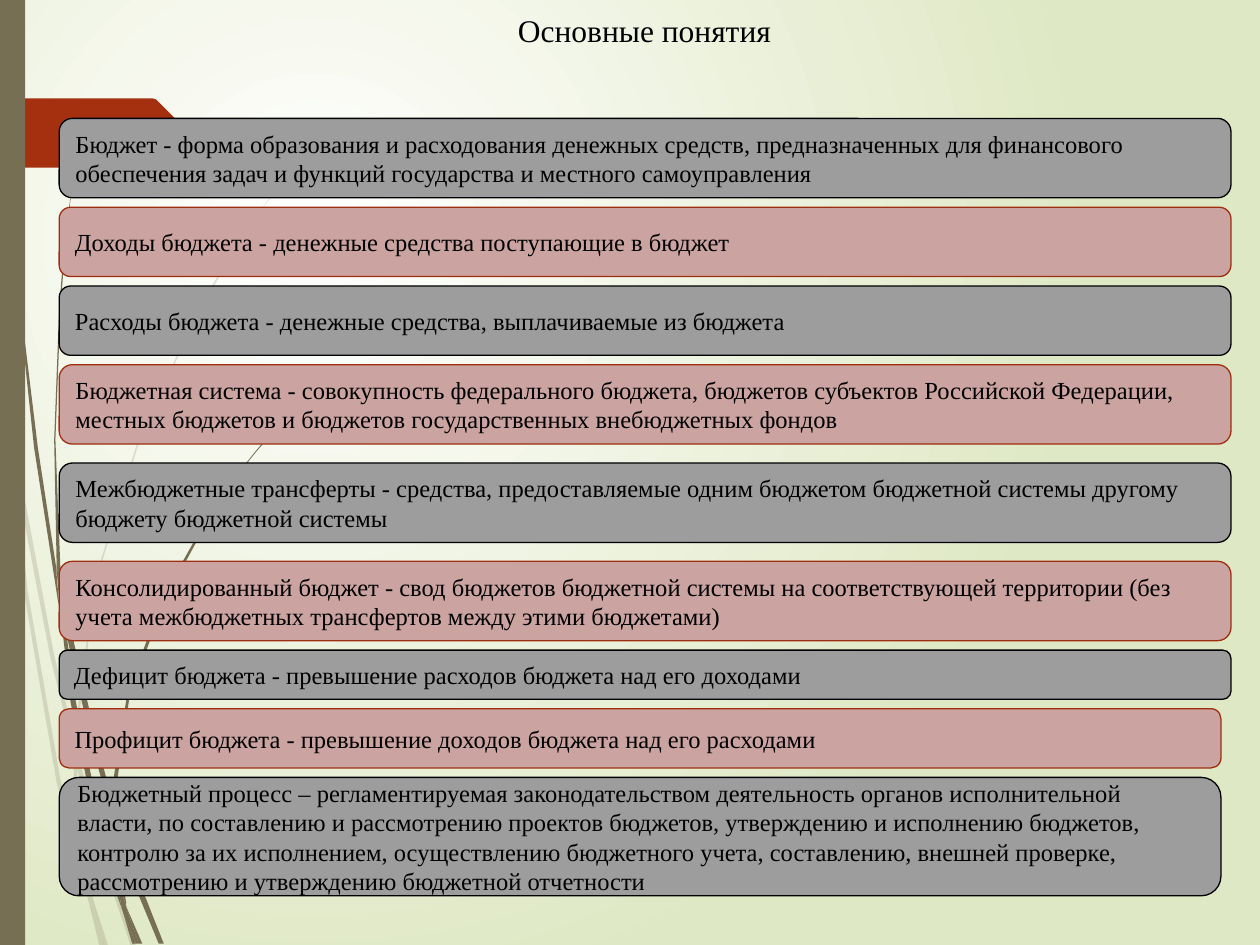
"""Build the slide of basic budget terms on a grid of 1000 columns by 750 rows."""
from dataclasses import dataclass

from lxml.etree import SubElement
from pptx import Presentation
from pptx.dml.color import RGBColor as RGB
from pptx.enum.shapes import MSO_SHAPE as SHAPE
from pptx.enum.text import MSO_ANCHOR as ANCHOR, PP_ALIGN as ALIGN
from pptx.oxml.ns import qn
from pptx.util import Inches, Pt


@dataclass(frozen=True)
class Theme:
    font: str = "Times New Roman"
    title_size: int = 18
    body_size: int = 14
    line_width: float = 0.75
    text: str = "000000"
    olive: str = "766F54"
    red: str = "A53010"
    glow: str = "FFFFFF"
    edge: str = "DFE8C4"
    bars: tuple = (("9D9D9D", "000000"), ("CBA3A0", "9E2E0F"))


theme = Theme()
CELL = Inches(0.01)
GAP = 7.5
FAINT = 20000

faint_wisps = [
    [(8, 350), (6, 322), (0, 282), (0, 299), (7, 344)],
    [(40, 522), (59, 599), (59, 586), (43, 520), (10, 345), (12, 376)],
    [(64, 607), (61, 596), (61, 610), (85, 694), (104, 751), (108, 751), (88, 692)],
    [(83, 751), (86, 751), (73, 711)],
    [(64, 683), (48, 619), (22, 469), (12, 376), (8, 350), (19, 470), (45, 621),
     (64, 693), (70, 714), (69, 707)],
    [(58, 599), (60, 646), (64, 683), (67, 692), (73, 711), (72, 706), (63, 646),
     (61, 610), (61, 608)],
    [(61, 584), (76, 462), (111, 349), (159, 245), (187, 198), (201, 175), (217, 154),
     (217, 153), (201, 175), (186, 197), (158, 244), (110, 348), (75, 461), (59, 584),
     (59, 586), (61, 596)],
    [(70, 714), (79, 751), (82, 751)],
    [(61, 608), (61, 610), (61, 596), (59, 586), (58, 599)],
    [(67, 692), (65, 683), (69, 707), (70, 714), (82, 751), (83, 751), (73, 711)],
]
solid_wisps = [
    [(5, 110), (14, 233), (27, 355), (46, 477), (47, 481), (45, 457), (45, 453),
     (30, 355), (15, 232), (6, 109), (4, 48), (3, 0), (2, 0), (3, 48)],
    [(73, 592), (88, 645), (88, 633), (88, 631), (77, 590), (50, 472), (53, 505)],
    [(94, 649), (91, 641), (91, 656), (109, 708), (126, 749), (130, 749), (113, 706)],
    [(91, 691), (81, 657), (60, 556), (53, 505), (47, 477), (56, 557), (77, 659),
     (92, 708), (97, 722), (96, 717)],
    [(50, 472), (48, 453), (44, 349), (48, 245), (52, 193), (58, 141), (51, 193),
     (47, 245), (43, 349), (45, 449), (49, 472)],
    [(110, 749), (113, 749), (100, 719)],
    [(47, 477), (53, 505), (50, 472), (49, 472), (45, 449), (45, 453)],
    [(91, 633), (103, 552), (131, 476), (169, 406), (191, 374), (203, 359), (216, 344),
     (215, 344), (203, 358), (191, 373), (168, 405), (129, 474), (101, 551), (88, 631),
     (91, 641)],
    [(97, 722), (105, 749), (108, 749)],
    [(88, 645), (91, 691), (96, 706), (100, 719), (100, 716), (91, 656), (90, 651)],
    [(96, 706), (91, 691), (96, 717), (97, 722), (108, 749), (110, 749), (100, 719)],
]
banner = [(149, 107), (124, 132), (121, 133), (0, 133), (0, 78), (121, 78), (124, 79),
          (149, 104)]

terms = [
    ("Бюджет - форма образования и расходования денежных средств, предназначенных для "
     "финансового обеспечения задач и функций государства и местного самоуправления",
     63, 930, GAP),
    ("Доходы бюджета - денежные средства поступающие в бюджет", 55, 930, GAP),
    ("Расходы бюджета - денежные средства, выплачиваемые из бюджета", 55, 930, GAP),
    ("Бюджетная система - совокупность федерального бюджета, бюджетов субъектов "
     "Российской Федерации, местных бюджетов и бюджетов государственных внебюджетных "
     "фондов", 63, 930, 2 * GAP),
    ("Межбюджетные трансферты - средства, предоставляемые одним бюджетом бюджетной "
     "системы другому бюджету бюджетной системы", 63, 930, 2 * GAP),
    ("Консолидированный бюджет - свод бюджетов бюджетной системы на соответствующей "
     "территории (без учета межбюджетных трансфертов между этими бюджетами)",
     63, 930, GAP),
    ("Дефицит бюджета - превышение расходов бюджета над его доходами", 39, 930, GAP),
    ("Профицит бюджета - превышение доходов бюджета над его расходами", 47, 922, GAP),
    ("Бюджетный процесс – регламентируемая законодательством деятельность органов "
     "исполнительной власти, по составлению и рассмотрению проектов бюджетов, "
     "утверждению и исполнению бюджетов, контролю за их исполнением, осуществлению "
     "бюджетного учета, составлению, внешней проверке, рассмотрению и утверждению "
     "бюджетной отчетности", 94, 922, GAP),
]


def paint(sp, color, line=None):
    sp.shadow.inherit = False
    sp.fill.solid()
    sp.fill.fore_color.rgb = RGB.from_string(color)
    if line:
        sp.line.color.rgb = RGB.from_string(line)
        sp.line.width = Pt(theme.line_width)
    else:
        sp.line.fill.background()


def write(sp, text, size, align, anchor):
    tf = sp.text_frame
    tf.word_wrap = True
    tf.vertical_anchor = anchor
    tf.text = text
    p = tf.paragraphs[0]
    p.alignment = align
    r = p.runs[0]
    r.font.name = theme.font
    r.font.size = Pt(size)
    r.font.color.rgb = RGB.from_string(theme.text)


prs = Presentation()
prs.slide_width, prs.slide_height = 1000 * CELL, 750 * CELL
s = prs.slides.add_slide(prs.slide_layouts[6])

fill = s.background.fill
fill.gradient()
for stop, color, position in zip(fill.gradient_stops, (theme.glow, theme.edge), (0, 1)):
    stop.color.rgb = RGB.from_string(color)
    stop.position = position
grad = s._element.find(".//" + qn("a:gradFill"))
grad.remove(grad.find(qn("a:lin")))
radial = SubElement(grad, qn("a:path"), {"path": "circle"})
SubElement(radial, qn("a:fillToRect"), l="50000", t="50000", r="100000", b="100000")

outlines = [(w, theme.olive, FAINT) for w in faint_wisps]
outlines += [(w, theme.olive, None) for w in solid_wisps]
outlines.append((banner, theme.red, None))
for points, color, alpha in outlines:
    builder = s.shapes.build_freeform(*points[0], scale=CELL)
    builder.add_line_segments(points[1:], close=True)
    sp = builder.convert_to_shape()
    paint(sp, color)
    if alpha:
        rgb = sp._element.spPr.find(qn("a:solidFill"))[0]
        SubElement(rgb, qn("a:alpha"), val=str(alpha))

strip = s.shapes.add_shape(SHAPE.RECTANGLE, 0, 0, 20 * CELL, prs.slide_height)
paint(strip, theme.olive)

title = s.shapes.add_textbox(49 * CELL, 4 * CELL, 925 * CELL, 81 * CELL)
write(title, "Основные понятия", theme.title_size, ALIGN.CENTER, ANCHOR.TOP)

top = 94
for i, (text, height, width, gap) in enumerate(terms):
    sp = s.shapes.add_shape(SHAPE.ROUNDED_RECTANGLE, 47 * CELL, int(top * CELL),
                            width * CELL, height * CELL)
    paint(sp, *theme.bars[i % 2])
    write(sp, text, theme.body_size, ALIGN.LEFT, ANCHOR.MIDDLE)
    top += height + gap

prs.save("out.pptx")
